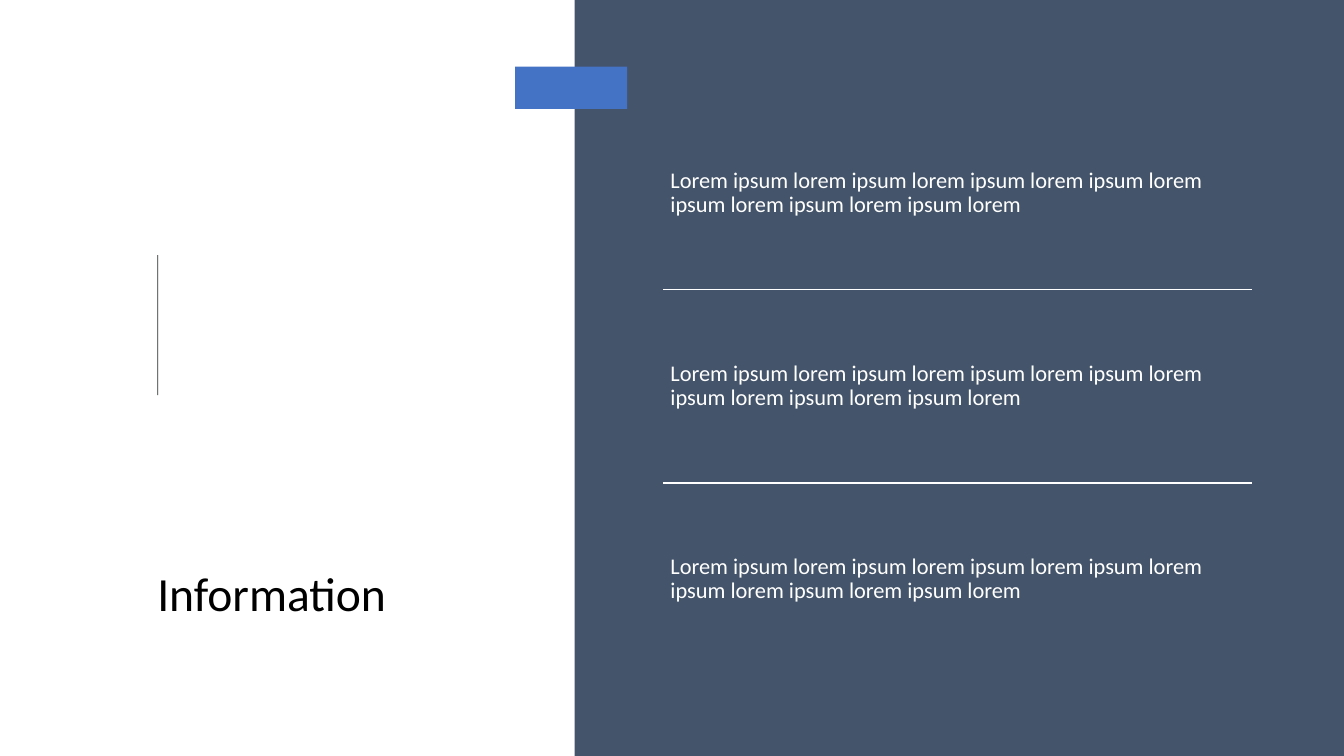
"""Build an information slide with a dark panel of three ruled statements."""
from dataclasses import dataclass

import pptx
import pptx.dml.color
import pptx.enum.shapes
import pptx.enum.text
import pptx.oxml.ns
import pptx.util
from lxml import etree
from pptx.util import Inches


@dataclass(frozen=True)
class Theme:
    """Colours, font and type sizes of the slide."""
    panel: str = "44546A"
    accent: str = "4472C4"
    rule: str = "24282B"
    title: str = "000000"
    light: str = "FFFFFF"
    font: str = "Calibri"
    title_size: int = 34
    body_size: int = 16


THEME = Theme()
STATEMENTS = ["Lorem ipsum lorem ipsum lorem ipsum lorem ipsum lorem "
              "ipsum lorem ipsum lorem ipsum lorem"] * 3
LIST_LEFT, LIST_TOP, LIST_WIDTH, ROW_HEIGHT = 6.58, 0.96, 5.84, 1.915


def colour(code):
    """Return the colour for a hex code."""
    return pptx.dml.color.RGBColor.from_string(code)


def add_block(page, left, top, width, height, fill):
    """Add a plain filled rectangle."""
    block = page.shapes.add_shape(
        pptx.enum.shapes.MSO_SHAPE.RECTANGLE,
        Inches(left), Inches(top), Inches(width), Inches(height))
    block.shadow.inherit = False
    block.fill.solid()
    block.fill.fore_color.rgb = colour(fill)
    block.line.fill.background()


def write_text(box, text, size, code, anchor, inset):
    """Fill a box with one left-aligned paragraph."""
    frame = box.text_frame
    frame.text = text
    frame.word_wrap = True
    frame.auto_size = pptx.enum.text.MSO_AUTO_SIZE.NONE
    frame.vertical_anchor = anchor
    frame.margin_left = frame.margin_right = Inches(inset)
    frame.margin_top = frame.margin_bottom = Inches(inset)
    para = frame.paragraphs[0]
    para.alignment = pptx.enum.text.PP_ALIGN.LEFT
    para.line_spacing = 0.9
    span = para.runs[0]
    span.font.name = THEME.font
    span.font.size = pptx.util.Pt(size)
    span.font.color.rgb = colour(code)


def add_title(page, text):
    """Place and format the title placeholder."""
    title = page.shapes.title
    title.left, title.top = Inches(1.56), Inches(4.41)
    title.width, title.height = Inches(4), Inches(1.76)
    write_text(title, text, THEME.title_size, THEME.title,
               pptx.enum.text.MSO_ANCHOR.BOTTOM, 0)


def add_statement(page, text, top):
    """Add one statement of the list."""
    box = page.shapes.add_textbox(
        Inches(LIST_LEFT), Inches(top), Inches(LIST_WIDTH), Inches(ROW_HEIGHT))
    write_text(box, text, THEME.body_size, THEME.light,
               pptx.enum.text.MSO_ANCHOR.MIDDLE, 0.07)


def add_divider(page, top):
    """Add a horizontal line between two statements."""
    line = page.shapes.add_connector(
        pptx.enum.shapes.MSO_CONNECTOR.STRAIGHT,
        Inches(LIST_LEFT), Inches(top), Inches(LIST_LEFT + LIST_WIDTH), Inches(top))
    line.line.color.rgb = colour(THEME.light)
    line.line.width = pptx.util.Pt(1)
    etree.SubElement(line._element.spPr, pptx.oxml.ns.qn("a:effectLst"))


def main():
    """Build and save the deck."""
    deck = pptx.Presentation()
    deck.slide_width, deck.slide_height = Inches(13.33), Inches(7.5)
    page = deck.slides.add_slide(deck.slide_layouts.get_by_name("Title Only"))
    add_block(page, 5.7, 0, 7.63, 7.5, THEME.panel)
    add_block(page, 1.56, 2.53, 0.01, 1.39, THEME.rule)
    add_block(page, 5.11, 0.66, 1.11, 0.42, THEME.accent)
    add_title(page, "Information")
    for row, text in enumerate(STATEMENTS):
        top = LIST_TOP + row * ROW_HEIGHT
        if row:
            add_divider(page, top)
        add_statement(page, text, top)
    deck.save("out.pptx")


if __name__ == "__main__":
    main()
